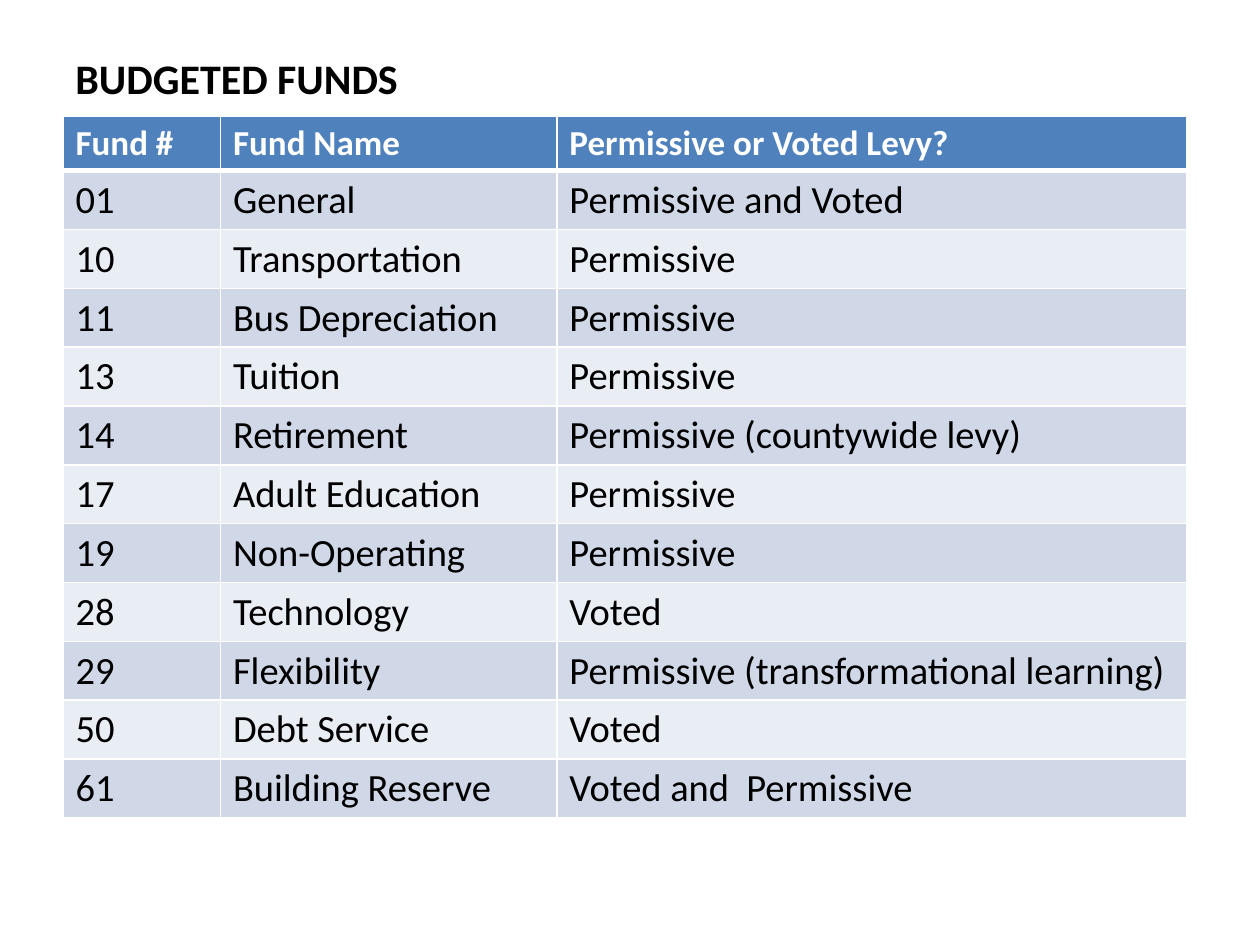
from dataclasses import dataclass

from lxml.etree import SubElement
from pptx import Presentation
from pptx.dml.color import RGBColor as Color
from pptx.enum.text import MSO_ANCHOR as Anchor
from pptx.oxml.ns import qn
from pptx.util import Inches, Pt


@dataclass(frozen=True)
class Theme:
    font: str = "Calibri"
    ink: str = "000000"
    white: str = "FFFFFF"
    header: str = "4F81BD"
    bands: tuple = ("D0D8E8", "E9EDF4")
    title_size: int = 24
    header_size: int = 20
    body_size: int = 22
    rule: int = 1
    header_rule: int = 3


THEME = Theme()

FUNDS = [
    ("Fund #", "Fund Name", "Permissive or Voted Levy?"),
    ("01", "General", "Permissive and Voted"),
    ("10", "Transportation", "Permissive"),
    ("11", "Bus Depreciation", "Permissive"),
    ("13", "Tuition", "Permissive"),
    ("14", "Retirement", "Permissive (countywide levy)"),
    ("17", "Adult Education", "Permissive"),
    ("19", "Non-Operating", "Permissive"),
    ("28", "Technology", "Voted"),
    ("29", "Flexibility", "Permissive (transformational learning)"),
    ("50", "Debt Service", "Voted"),
    ("61", "Building Reserve", "Voted and  Permissive"),
]
COLUMN_WIDTHS = (1.25, 2.67, 5)
ROW_HEIGHT = 0.41


def write(frame, text, size, color, bold):
    span = frame.paragraphs[0].add_run()
    span.text = text
    for name, value in {"name": THEME.font, "size": Pt(size), "bold": bold}.items():
        setattr(span.font, name, value)
    span.font.color.rgb = Color.from_string(color)


def set_borders(cell, widths):
    properties = cell._tc.get_or_add_tcPr()
    for side, width in widths.items():
        line = SubElement(properties, qn(f"a:ln{side}"), w=str(Pt(width)))
        fill = SubElement(line, qn("a:solidFill"))
        SubElement(fill, qn("a:srgbClr"), val=THEME.white)


def add_title(page, left, top, width, height):
    box = page.shapes.add_textbox(left, top, width, height)
    frame = box.text_frame
    for name, value in {"word_wrap": True, "vertical_anchor": Anchor.BOTTOM}.items():
        setattr(frame, name, value)
    write(frame, "BUDGETED FUNDS", THEME.title_size, THEME.ink, True)


def add_fund_table(page, left, top, width, height):
    table = page.shapes.add_table(
        len(FUNDS), len(COLUMN_WIDTHS), left, top, width, height
    ).table
    for column, column_width in zip(table.columns, COLUMN_WIDTHS):
        column.width = Inches(column_width)
    for index, fund in enumerate(FUNDS):
        table.rows[index].height = Inches(ROW_HEIGHT)
        is_header = index == 0
        if is_header:
            fill, size, color = THEME.header, THEME.header_size, THEME.white
        else:
            fill, size, color = THEME.bands[(index - 1) % 2], THEME.body_size, THEME.ink
        borders = dict.fromkeys("LRTB", THEME.rule)
        if is_header:
            borders["B"] = THEME.header_rule
        elif index == 1:
            borders["T"] = THEME.header_rule
        for cell, text in zip(table.rows[index].cells, fund):
            set_borders(cell, borders)
            cell.fill.solid()
            cell.fill.fore_color.rgb = Color.from_string(fill)
            write(cell.text_frame, text, size, color, is_header)


def main():
    deck = Presentation()
    deck.slide_width, deck.slide_height = Inches(10), Inches(7.5)
    page = deck.slides.add_slide(deck.slide_layouts[6])
    add_title(page, Inches(0.5), Inches(0.17), Inches(4.42), Inches(0.7))
    add_fund_table(
        page,
        Inches(0.5),
        Inches(0.92),
        Inches(sum(COLUMN_WIDTHS)),
        Inches(ROW_HEIGHT * len(FUNDS)),
    )
    deck.save("out.pptx")


if __name__ == "__main__":
    main()
